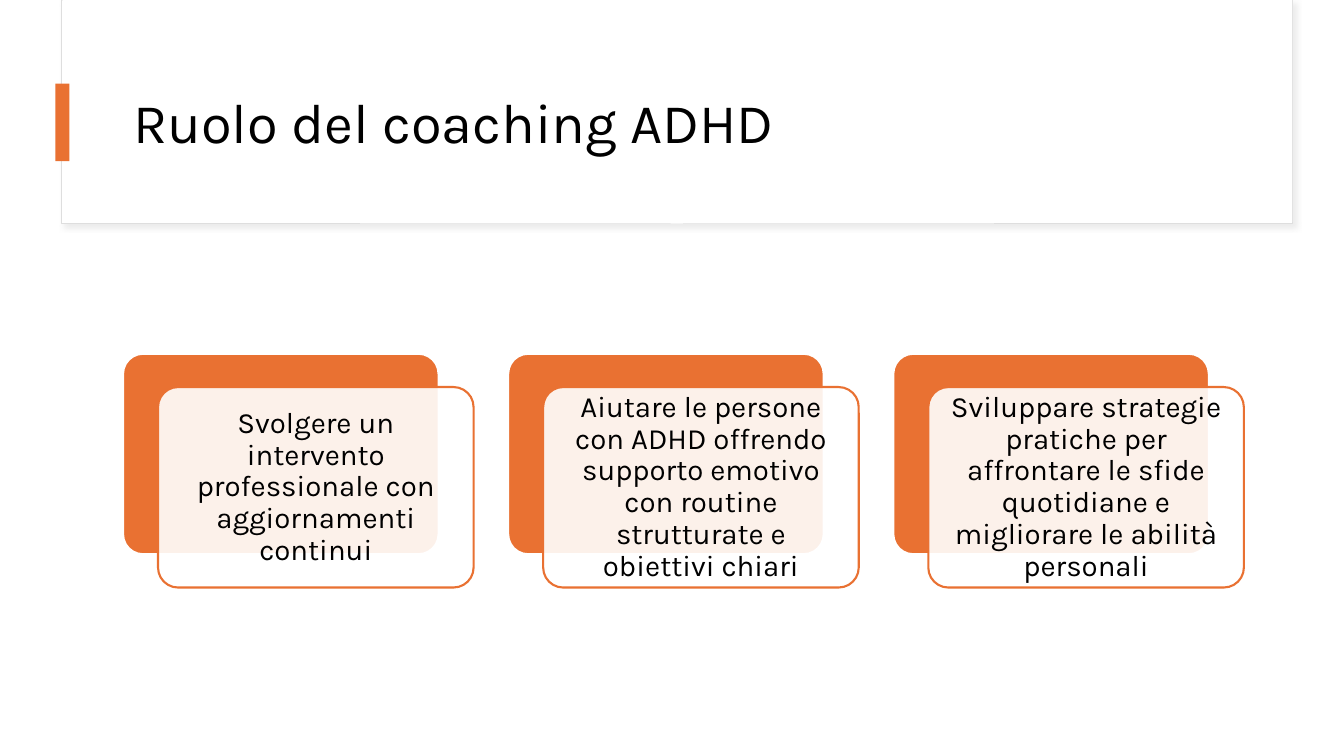
from lxml import etree
from pptx import Presentation
from pptx.dml.color import RGBColor
from pptx.enum.shapes import MSO_SHAPE as Shape
from pptx.enum.text import MSO_ANCHOR as Anchor, MSO_AUTO_SIZE as AutoSize, PP_ALIGN as Align
from pptx.oxml import parse_xml
from pptx.oxml.ns import qn
from pptx.util import Pt

WHITE = RGBColor(0xFF, 0xFF, 0xFF)
BLACK = RGBColor(0, 0, 0)
ORANGE = RGBColor(0xE9, 0x71, 0x32)
GREY = RGBColor(0xDE, 0xDE, 0xDE)

FRAME_SHADOW = """<a:effectLst xmlns:a="http://schemas.openxmlformats.org/drawingml/2006/main">
  <a:outerShdw blurRad="50800" dist="38100" dir="2700000" algn="tl" rotWithShape="0">
    <a:srgbClr val="D9D9D9"><a:alpha val="50000"/></a:srgbClr>
  </a:outerShdw>
</a:effectLst>"""

ROLES = [
    "Svolgere un intervento professionale con aggiornamenti continui",
    "Aiutare le persone con ADHD offrendo supporto emotivo con routine strutturate e obiettivi chiari",
    "Sviluppare strategie pratiche per affrontare le sfide quotidiane e migliorare le abilità personali",
]

prs = Presentation()
prs.slide_width, prs.slide_height = Pt(960), Pt(540)
slide = prs.slides.add_slide(prs.slide_layouts[5])


def add_block(kind, left, top, width, height, fill, line=None, line_width=1.5):
    block = slide.shapes.add_shape(kind, Pt(left), Pt(top), Pt(width), Pt(height))
    block.shadow.inherit = False
    block.fill.solid()
    block.fill.fore_color.rgb = fill
    if line is None:
        block.line.fill.background()
    else:
        block.line.color.rgb = line
        block.line.width = Pt(line_width)
    if kind == Shape.ROUNDED_RECTANGLE:
        block.adjustments[0] = 0.1
    return block


def write(holder, text, size, align, inset_x=7.2, inset_y=3.6):
    frame = holder.text_frame
    frame.word_wrap = True
    frame.auto_size = AutoSize.NONE
    frame.vertical_anchor = Anchor.MIDDLE
    frame.margin_left = frame.margin_right = Pt(inset_x)
    frame.margin_top = frame.margin_bottom = Pt(inset_y)
    frame.text = text
    paragraph = frame.paragraphs[0]
    paragraph.alignment = align
    paragraph.line_spacing = 0.9
    paragraph.font.name = "Karla"
    paragraph.font.size = Pt(size)
    paragraph.font.color.rgb = BLACK


# Header frame with a soft shadow, and the white panel over it
header_frame = add_block(Shape.RECTANGLE, 44, 0.5, 879, 159.5, WHITE, GREY, 0.75)
header_props = header_frame.element.spPr
header_props.replace(header_props.find(qn("a:effectLst")), parse_xml(FRAME_SHADOW))
header_panel = add_block(Shape.RECTANGLE, 44.5, 0, 878.5, 158.5, WHITE)

# Title, brought in front of the header
title = slide.shapes.title
title.left, title.top, title.width, title.height = Pt(88), Pt(43.2), Pt(800.6), Pt(92.9)
write(title, "Ruolo del coaching ADHD", 40, Align.LEFT)
header_panel.element.addnext(title.element)

# Accent bar
add_block(Shape.RECTANGLE, 39.6, 59.8, 10, 55.4, ORANGE)

# Role cards: an orange back plate and a translucent front card
CARD_WIDTH, CARD_HEIGHT = 225.4, 143.2
FIRST_LEFT, CARD_TOP, CARD_STEP = 87.9, 252.7, 275.1
OFFSET_X, OFFSET_Y = 25, 23.8

for index, role in enumerate(ROLES):
    left = FIRST_LEFT + index * CARD_STEP
    add_block(Shape.ROUNDED_RECTANGLE, left, CARD_TOP, CARD_WIDTH, CARD_HEIGHT, ORANGE, WHITE)
    card = add_block(Shape.ROUNDED_RECTANGLE, left + OFFSET_X, CARD_TOP + OFFSET_Y,
                     CARD_WIDTH, CARD_HEIGHT, WHITE, ORANGE)
    card_color = card.element.spPr.find(qn("a:solidFill")).find(qn("a:srgbClr"))
    etree.SubElement(card_color, qn("a:alpha"), val="90000")
    write(card, role, 21, Align.CENTER, inset_x=6.3, inset_y=6.3)

prs.save("out.pptx")
